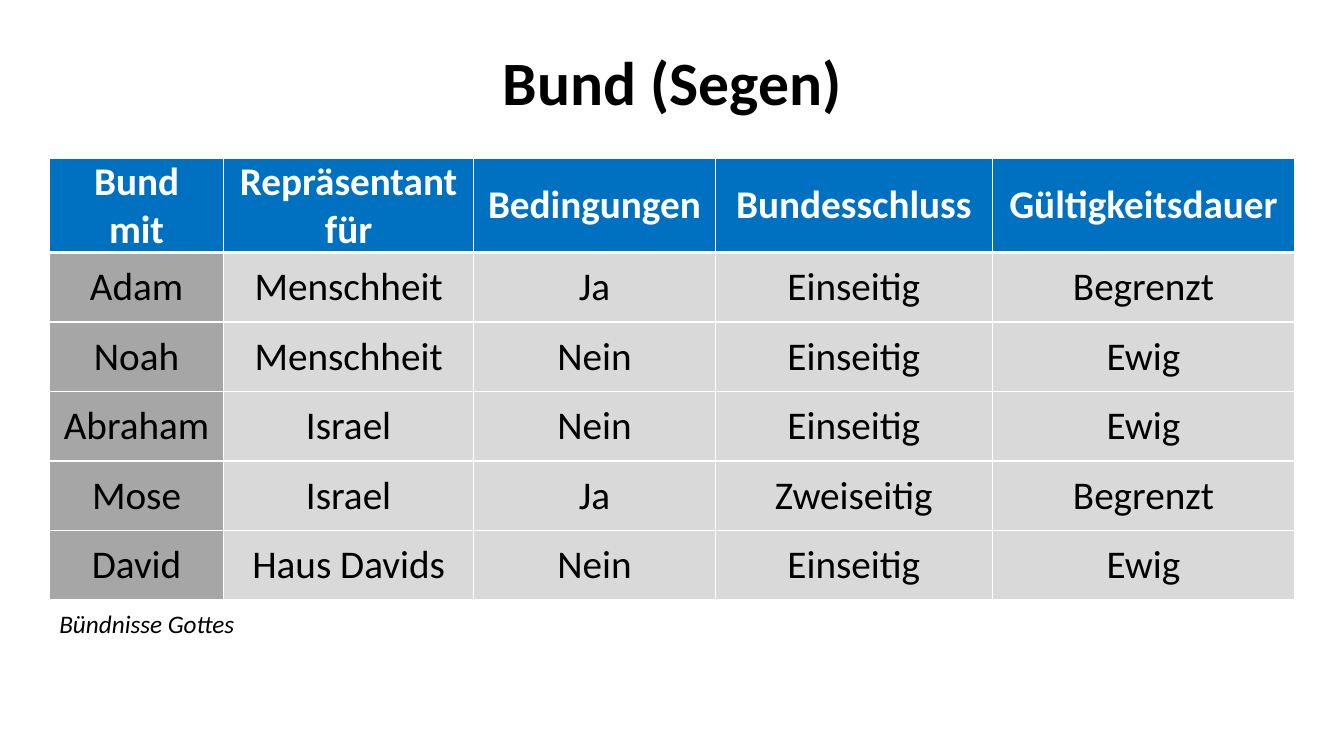
from dataclasses import dataclass

from lxml.etree import SubElement
from pptx import Presentation
from pptx.dml.color import RGBColor
from pptx.enum.text import MSO_ANCHOR, MSO_AUTO_SIZE, PP_ALIGN
from pptx.oxml.ns import qn
from pptx.util import Inches, Pt


@dataclass(frozen=True)
class Theme:
    """Colours, font and type sizes of the slide."""
    font: str = "Calibri"
    ink: str = "000000"
    paper: str = "FFFFFF"
    header: str = "0070C0"
    partner: str = "A6A6A6"
    body: str = "D9D9D9"
    title_size: int = 44
    table_size: int = 28
    caption_size: int = 18


THEME = Theme()

COVENANTS = [
    ("Bund mit", "Repräsentant für", "Bedingungen", "Bundesschluss", "Gültigkeitsdauer"),
    ("Adam", "Menschheit", "Ja", "Einseitig", "Begrenzt"),
    ("Noah", "Menschheit", "Nein", "Einseitig", "Ewig"),
    ("Abraham", "Israel", "Nein", "Einseitig", "Ewig"),
    ("Mose", "Israel", "Ja", "Zweiseitig", "Begrenzt"),
    ("David", "Haus Davids", "Nein", "Einseitig", "Ewig"),
]
COLUMN_WIDTHS = (1.73, 2.48, 2.4, 2.75, 3)
HEADER_HEIGHT, ROW_HEIGHT = 0.47, 0.69
CELL_INSET = 0.14


def write(frame, text, *, size, color=THEME.ink, bold=False, italic=False,
          align=PP_ALIGN.LEFT, spacing=1.0):
    """Write one formatted paragraph into a text frame."""
    paragraph = frame.paragraphs[0]
    paragraph.alignment = align
    paragraph.line_spacing = spacing
    run = paragraph.add_run()
    run.text = text
    run.font.name = THEME.font
    run.font.size = Pt(size)
    run.font.bold = bold
    run.font.italic = italic
    run.font.color.rgb = RGBColor.from_string(color)


def add_title(slide, left, top, width, height):
    """Place the centred heading in its box."""
    title = slide.shapes.add_textbox(Inches(left), Inches(top), Inches(width), Inches(height))
    title.text_frame.word_wrap = True
    title.text_frame.vertical_anchor = MSO_ANCHOR.MIDDLE
    write(title.text_frame, "Bund (Segen)", size=THEME.title_size, bold=True,
          align=PP_ALIGN.CENTER, spacing=0.9)


def rule_cell(cell, top, bottom):
    """Draw the rules around a cell, with top and bottom weights in points."""
    properties = cell._tc.get_or_add_tcPr()
    for side, weight in (("L", 1), ("R", 1), ("T", top), ("B", bottom)):
        rule = SubElement(properties, qn(f"a:ln{side}"), w=str(Pt(weight)))
        paint = SubElement(rule, qn("a:solidFill"))
        SubElement(paint, qn("a:srgbClr"), val=THEME.paper)


def add_covenants(slide, left, top, width):
    """Place the table of covenants from the given corner."""
    height = HEADER_HEIGHT + ROW_HEIGHT * (len(COVENANTS) - 1)
    table = slide.shapes.add_table(len(COVENANTS), len(COLUMN_WIDTHS), Inches(left),
                                   Inches(top), Inches(width), Inches(height)).table
    for column, share in zip(table.columns, COLUMN_WIDTHS):
        column.width = Inches(width * share / sum(COLUMN_WIDTHS))
    for r, covenant in enumerate(COVENANTS):
        is_header = r == 0
        table.rows[r].height = Inches(HEADER_HEIGHT if is_header else ROW_HEIGHT)
        for c, entry in enumerate(covenant):
            cell = table.cell(r, c)
            cell.margin_left = cell.margin_right = Inches(CELL_INSET)
            cell.margin_top = cell.margin_bottom = 0
            cell.vertical_anchor = MSO_ANCHOR.MIDDLE
            rule_cell(cell, top=3 if r == 1 else 1, bottom=3 if is_header else 1)
            tint = THEME.header if is_header else THEME.body if c else THEME.partner
            cell.fill.solid()
            cell.fill.fore_color.rgb = RGBColor.from_string(tint)
            write(cell.text_frame, entry, size=THEME.table_size, bold=is_header,
                  color=THEME.paper if is_header else THEME.ink, align=PP_ALIGN.CENTER)


def add_caption(slide, left, top, width, height):
    """Place the italic caption under the table."""
    caption = slide.shapes.add_textbox(Inches(left), Inches(top), Inches(width), Inches(height))
    caption.text_frame.word_wrap = False
    caption.text_frame.auto_size = MSO_AUTO_SIZE.SHAPE_TO_FIT_TEXT
    write(caption.text_frame, "Bündnisse Gottes", size=THEME.caption_size, italic=True)


def main():
    """Build the slide and save it."""
    deck = Presentation()
    deck.slide_width, deck.slide_height = Inches(13.33), Inches(7.5)
    slide = deck.slides.add_slide(deck.slide_layouts[6])
    add_title(slide, 0.92, 0.4, 11.5, 0.89)
    add_covenants(slide, 0.49, 1.57, 12.35)
    add_caption(slide, 0.49, 5.99, 1.96, 0.4)
    deck.save("out.pptx")


if __name__ == "__main__":
    main()
